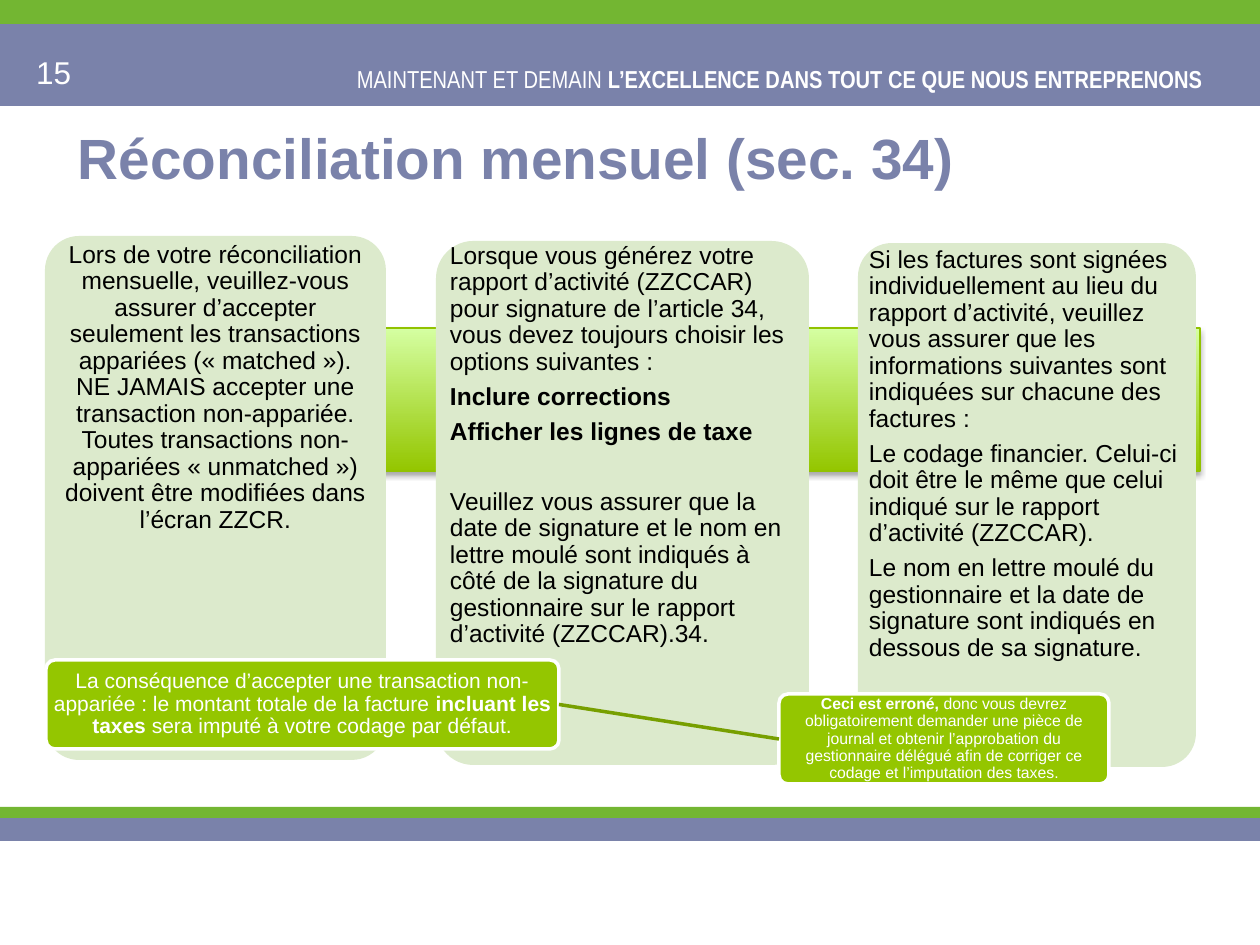
from dataclasses import dataclass

from lxml.etree import SubElement
from pptx import Presentation
from pptx.dml.color import RGBColor
from pptx.enum.shapes import MSO_CONNECTOR, MSO_SHAPE
from pptx.enum.text import MSO_ANCHOR, PP_ALIGN
from pptx.oxml.ns import qn
from pptx.util import Inches, Pt

PX_PER_INCH = 126
SLIDE_W, SLIDE_H = 1260, 945


@dataclass(frozen=True)
class Theme:
    slate: str = "7A82AA"
    green: str = "73B632"
    card: str = "DCEACC"
    lime: str = "94C600"
    pale_lime: str = "D5FFA2"
    lime_edge: str = "91C200"
    link: str = "779F00"
    white: str = "FFFFFF"
    black: str = "000000"
    font: str = "Arial"
    narrow: str = "Arial Narrow"
    title: float = 32.4
    number: int = 18
    body: int = 14
    callout: int = 12
    small_callout: int = 9


THEME = Theme()

CARDS = [
    ((45, 236, 341, 524), (59, 242, 313, 300), PP_ALIGN.CENTER, [
        [("Lors de votre réconciliation mensuelle, veuillez-vous assurer d’accepter "
          "seulement les transactions appariées (« matched »). NE JAMAIS accepter une "
          "transaction non-appariée. Toutes transactions non-appariées « unmatched ») "
          "doivent être modifiées dans l’écran ZZCR.", False)],
    ]),
    ((436, 241, 373, 524), (450, 243, 345, 410), PP_ALIGN.LEFT, [
        [("Lorsque vous générez votre rapport d’activité (ZZCCAR) pour signature de "
          "l’article 34, vous devez toujours choisir les options suivantes :", False)],
        [("Inclure corrections", True)],
        [("Afficher les lignes de taxe", True)],
        [("Veuillez vous assurer que la date de signature et le nom en lettre moulé sont "
          "indiqués à côté de la signature du gestionnaire sur le rapport d’activité "
          "(ZZCCAR).34.", False)],
    ]),
    ((858, 243, 338, 524), (869, 247, 315, 420), PP_ALIGN.LEFT, [
        [("Si les factures sont signées individuellement au lieu du rapport d’activité, "
          "veuillez vous assurer que les informations suivantes sont indiquées sur "
          "chacune des factures :", False)],
        [("Le codage financier. Celui-ci doit être le même que celui indiqué sur le "
          "rapport d’activité (ZZCCAR).", False)],
        [("Le nom en lettre moulé du gestionnaire et la date de signature sont indiqués "
          "en dessous de sa signature.", False)],
    ]),
]

CONSEQUENCE = [
    ("La conséquence d’accepter une transaction non-appariée : le montant totale de la "
     "facture ", False),
    ("incluant les taxes", True),
    (" sera imputé à votre codage par défaut.", False),
]
CORRECTION = [
    ("Ceci est erroné, ", True),
    ("donc vous devrez obligatoirement demander une pièce de journal et obtenir "
     "l’approbation du gestionnaire délégué afin de corriger ce codage et l’imputation "
     "des taxes.", False),
]


def px(length):
    return Inches(length / PX_PER_INCH)


def rgb(code):
    return RGBColor.from_string(code)


def write_text(frame, paragraphs, *, size, color, font=THEME.font, align=PP_ALIGN.LEFT,
               anchor=MSO_ANCHOR.TOP, inset=(0, 0), spacing=1.0, after=0):
    frame.word_wrap = True
    frame.vertical_anchor = anchor
    frame.margin_left = frame.margin_right = px(inset[0])
    frame.margin_top = frame.margin_bottom = px(inset[1])
    for index, runs in enumerate(paragraphs):
        paragraph = frame.add_paragraph() if index else frame.paragraphs[0]
        paragraph.alignment = align
        paragraph.line_spacing = spacing
        paragraph.space_after = Pt(after)
        for words, bold in runs:
            run = paragraph.add_run()
            run.text = words
            run.font.name = font
            run.font.size = Pt(size)
            run.font.bold = bold
            run.font.color.rgb = rgb(color)


def add_label(slide, box, paragraphs, **style):
    label = slide.shapes.add_textbox(*map(px, box))
    write_text(label.text_frame, paragraphs, **style)
    return label


def add_panel(slide, box, fill, rounded=False, edge=None, edge_width=2):
    preset = MSO_SHAPE.ROUNDED_RECTANGLE if rounded else MSO_SHAPE.RECTANGLE
    panel = slide.shapes.add_shape(preset, *map(px, box))
    panel.shadow.inherit = False
    if rounded:
        panel.adjustments[0] = 0.1
    panel.fill.solid()
    panel.fill.fore_color.rgb = rgb(fill)
    if edge:
        panel.line.color.rgb = rgb(edge)
        panel.line.width = Pt(edge_width)
    else:
        panel.line.fill.background()
    return panel


def add_gradient_band(slide, box):
    band = add_panel(slide, box, THEME.lime, edge=THEME.lime_edge, edge_width=0.75)
    band.fill.gradient()
    band.fill.gradient_angle = 90
    for stop, color in zip(band.fill.gradient_stops, (THEME.lime, THEME.pale_lime)):
        stop.color.rgb = rgb(color)
    effects = band._element.spPr.find(qn("a:effectLst"))
    shadow = SubElement(effects, qn("a:outerShdw"), blurRad=str(Pt(3.1)),
                        dist=str(Pt(1.8)), dir="5400000", rotWithShape="0")
    tint = SubElement(shadow, qn("a:srgbClr"), val=THEME.black)
    SubElement(tint, qn("a:alpha"), val="35000")


def add_callout(slide, box, runs, size):
    callout = add_panel(slide, box, THEME.lime, rounded=True, edge=THEME.white)
    write_text(callout.text_frame, [runs], size=size, color=THEME.white,
               align=PP_ALIGN.CENTER, anchor=MSO_ANCHOR.MIDDLE, inset=(1, 1), spacing=0.9)
    return callout


def join_callouts(slide, start, end):
    link = slide.shapes.add_connector(MSO_CONNECTOR.STRAIGHT, 0, 0, 0, 0)
    link.begin_connect(start, 3)
    link.end_connect(end, 1)
    link.line.color.rgb = rgb(THEME.link)
    link.line.width = Pt(2)
    SubElement(link._element.spPr, qn("a:effectLst"))


def add_frame(slide):
    for top, height, color in ((24, 82, THEME.slate), (0, 24, THEME.green),
                               (818, 23, THEME.slate), (807, 11, THEME.green)):
        add_panel(slide, (0, top, SLIDE_W, height), color)
    motto = [("MAINTENANT ET DEMAIN ", False),
             ("L’EXCELLENCE DANS TOUT CE QUE NOUS ENTREPRENONS", True)]
    add_label(slide, (304, 58, 912, 43), [motto], size=THEME.body, color=THEME.white,
              font=THEME.narrow, align=PP_ALIGN.RIGHT, inset=(13, 6))
    add_label(slide, (23, 47, 293, 50), [[("15", False)]], size=THEME.number,
              color=THEME.white, inset=(13, 6))
    add_label(slide, (65, 125, 1152, 64), [[("Réconciliation mensuel (sec. 34)", True)]],
              size=THEME.title, color=THEME.slate, anchor=MSO_ANCHOR.MIDDLE, inset=(13, 6))


def add_cards(slide):
    for card_box, text_box, align, paragraphs in CARDS:
        add_panel(slide, card_box, THEME.card, rounded=True)
        label = add_label(slide, text_box, paragraphs, size=THEME.body, color=THEME.black,
                          align=align, spacing=0.9, after=4.9)
        for paragraph in label.text_frame.paragraphs:
            if paragraph.text.startswith("Veuillez"):
                paragraph.space_before = Pt(20)


def main():
    deck = Presentation()
    deck.slide_width, deck.slide_height = px(SLIDE_W), px(SLIDE_H)
    slide = deck.slides.add_slide(deck.slide_layouts[6])
    add_frame(slide)
    add_gradient_band(slide, (64, 328, 1136, 143))
    add_cards(slide)
    consequence = add_callout(slide, (46, 660, 513, 89), CONSEQUENCE, THEME.callout)
    correction = add_callout(slide, (779, 694, 330, 90), CORRECTION, THEME.small_callout)
    join_callouts(slide, consequence, correction)
    deck.save("out.pptx")


if __name__ == "__main__":
    main()
